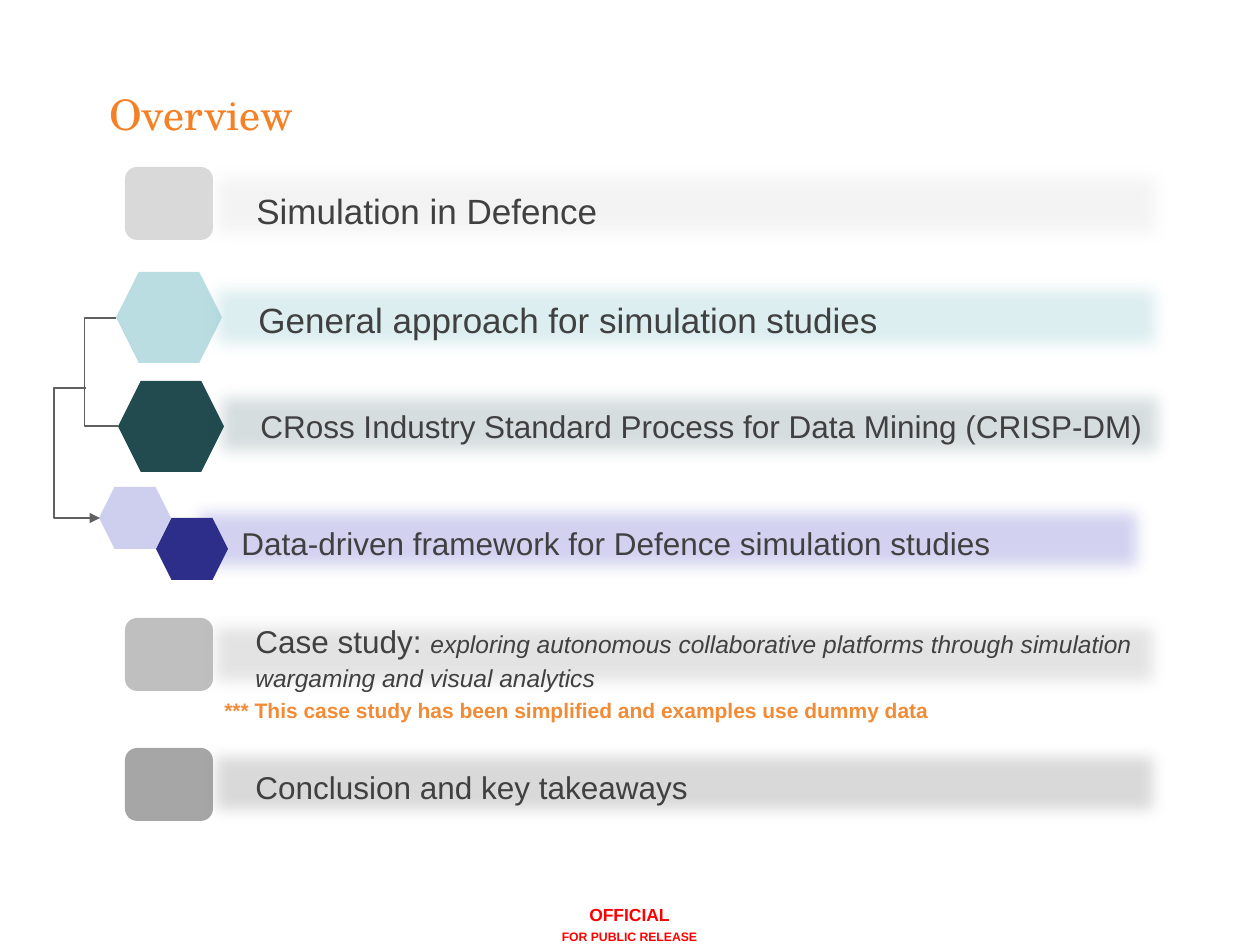
from lxml.etree import SubElement
from pptx import Presentation
from pptx.dml.color import RGBColor
from pptx.enum.shapes import MSO_CONNECTOR, MSO_SHAPE
from pptx.enum.text import PP_ALIGN
from pptx.oxml.ns import qn
from pptx.util import Pt

PX = 914400 // 126
SLIDE_SIZE = (1260, 945)
BAR_SIZE = (965, 81)
SOFT_EDGE = 112500

COLORS = {
    "title": "F58025", "text": "404040", "note": "F28B36", "official": "FF0000",
    "line": "606060", "silver": "D9D9D9", "grey": "A6A6A6", "dark grey": "808080",
    "mid grey": "BFBFBF", "aqua": "8AC6CD", "pale aqua": "BADDE1", "teal": "224B50",
    "violet": "6B6BCF", "pale violet": "CECEEF", "navy": "2D2D8A",
}

# left, top, colour, opacity in percent
BACK_BAR = (186, 499, "violet", 30)
FRONT_BARS = [
    (204, 277, "aqua", 30),
    (207, 384, "teal", 18),
    (204, 165, "silver", 30),
    (202, 614, "grey", 30),
    (202, 743, "dark grey", 30),
]

# left, top, width, height, colour
HEXAGONS = [
    (116, 272, 106, 91, "pale aqua"),
    (118, 381, 106, 91, "teal"),
    (99, 487, 72, 62, "pale violet"),
    (156, 518, 72, 62, "navy"),
]
SQUARES = [
    (125, 167, 88, 73, "silver"),
    (125, 618, 88, 73, "mid grey"),
    (125, 748, 88, 73, "grey"),
]

# start, end, x of the upright part, arrowhead
BRACKETS = [
    ((116, 318), (118, 426), 84, False),
    ((86, 388), (100, 518), 54, True),
]

# left, top, width, height, text, size
TOPICS = [
    (244, 179, 859, 73, "Simulation in Defence", 20),
    (246, 288, 859, 73, "General approach for simulation studies", 20),
    (248, 397, 945, 68, "CRoss Industry Standard Process for Data Mining (CRISP-DM)", 18),
    (229, 514, 945, 68, "Data-driven framework for Defence simulation studies", 18),
    (243, 758, 945, 68, "Conclusion and key takeaways", 18),
]
CASE_STUDY = [
    ("Case study: ", {"size": 18}),
    ("exploring autonomous collaborative platforms through simulation "
     "wargaming and visual analytics", {"size": 14, "italic": True}),
]
NOTE = "*** This case study has been simplified and examples use dummy data"
MARKING = [("OFFICIAL", 10, 0), ("FOR PUBLIC RELEASE", 7, 1.4)]


def rgb(name):
    return RGBColor.from_string(COLORS[name])


def emu(*lengths):
    return [length * PX for length in lengths]


def add_block(slide, preset, box, color):
    shape = slide.shapes.add_shape(preset, *emu(*box))
    shape.shadow.inherit = False
    shape.fill.solid()
    shape.fill.fore_color.rgb = rgb(color)
    shape.line.fill.background()
    return shape


def add_bar(slide, left, top, color, opacity):
    """Add a translucent bar with soft edges."""
    bar = add_block(slide, MSO_SHAPE.FLOWCHART_PROCESS, (left, top, *BAR_SIZE), color)
    properties = bar._element.spPr
    fill_color = properties.find(qn("a:solidFill"))[0]
    SubElement(fill_color, qn("a:alpha"), val=str(opacity * 1000))
    effects = properties.find(qn("a:effectLst"))
    SubElement(effects, qn("a:softEdge"), rad=str(SOFT_EDGE))


def add_bracket(slide, start, end, upright_x, arrow):
    """Add an elbow connector whose upright part lies left of both ends."""
    connector = slide.shapes.add_connector(MSO_CONNECTOR.ELBOW, *emu(*start, *end))
    connector.line.color.rgb = rgb("line")
    connector.line.width = Pt(0.75)
    properties = connector._element.spPr
    ratio = (upright_x - start[0]) / (end[0] - start[0])
    adjustments = properties.find(qn("a:prstGeom")).get_or_add_avLst()
    SubElement(adjustments, qn("a:gd"), name="adj1", fmla=f"val {round(ratio * 100000)}")
    if arrow:
        SubElement(connector.line._get_or_add_ln(), qn("a:tailEnd"), type="triangle")
    SubElement(properties, qn("a:effectLst"))


def add_text_frame(slide, box):
    frame = slide.shapes.add_textbox(*emu(*box)).text_frame
    frame.word_wrap = True
    return frame


def write(paragraph, text, size=18, color="text", font="Arial", bold=False,
          italic=False, align=PP_ALIGN.LEFT, before=0):
    paragraph.alignment = align
    paragraph.line_spacing = 1.1
    paragraph.space_before = Pt(before)
    run = paragraph.add_run()
    run.text = text
    run.font.name = font
    run.font.size = Pt(size)
    run.font.bold = bold
    run.font.italic = italic
    run.font.color.rgb = rgb(color)


def main():
    presentation = Presentation()
    presentation.slide_width, presentation.slide_height = emu(*SLIDE_SIZE)
    slide = presentation.slides.add_slide(presentation.slide_layouts[6])

    add_bar(slide, *BACK_BAR)
    for preset, blocks in ((MSO_SHAPE.HEXAGON, HEXAGONS),
                           (MSO_SHAPE.ROUNDED_RECTANGLE, SQUARES)):
        for *box, color in blocks:
            add_block(slide, preset, box, color)
    for bracket in BRACKETS:
        add_bracket(slide, *bracket)
    for bar in FRONT_BARS:
        add_bar(slide, *bar)

    title = add_text_frame(slide, (97, 77, 1071, 86))
    write(title.paragraphs[0], "Overview", size=24, color="title", font="TeX Gyre Schola")
    for *box, text, size in TOPICS:
        write(add_text_frame(slide, box).paragraphs[0], text, size=size)
    case_study = add_text_frame(slide, (243, 612, 945, 68)).paragraphs[0]
    for text, style in CASE_STUDY:
        write(case_study, text, **style)
    note = add_text_frame(slide, (212, 689, 748, 49))
    write(note.paragraphs[0], NOTE, size=12, color="note", bold=True)

    marking = add_text_frame(slide, (479, 896, 301, 30))
    for index, (text, size, before) in enumerate(MARKING):
        paragraph = marking.add_paragraph() if index else marking.paragraphs[0]
        write(paragraph, text, size=size, color="official", bold=True,
              align=PP_ALIGN.CENTER, before=before)

    presentation.save("out.pptx")


if __name__ == "__main__":
    main()
